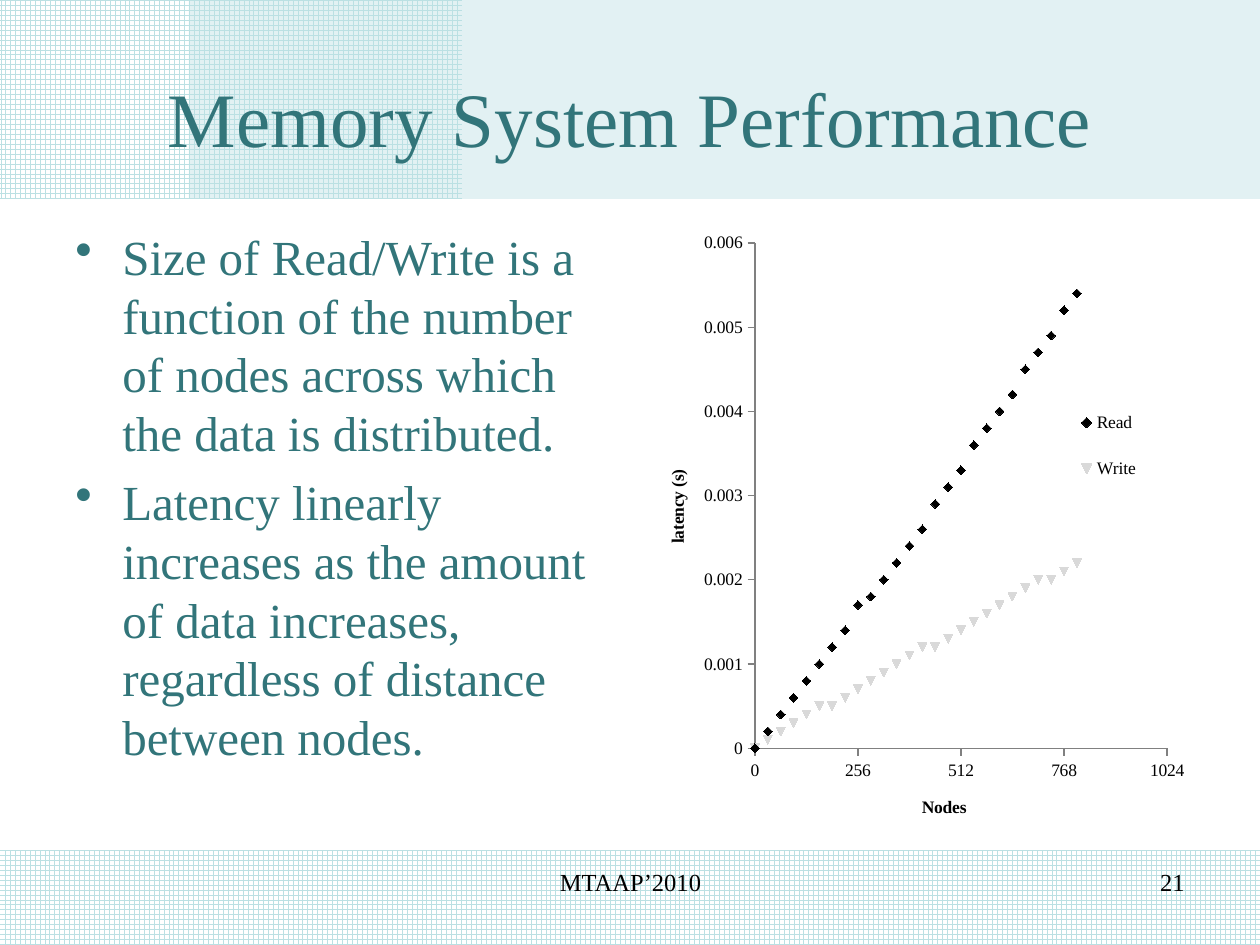
from lxml import etree
from pptx import Presentation, util as u
from pptx.chart.data import XyChartData
from pptx.dml.color import RGBColor
from pptx.enum import chart as ch, dml, shapes, text
from pptx.oxml import parse_xml
from pptx.oxml.ns import nsdecls, qn

SCALE = 914400 / 126
FONT = "Times New Roman"
TEAL, MINT, BLACK, GRAY = "32757A", "BBE0E3", "000000", "808080"
STEP = 32
READ = [0, 2, 4, 6, 8, 10, 12, 14, 17, 18, 20, 22, 24,
        26, 29, 31, 33, 36, 38, 40, 42, 45, 47, 49, 52, 54]
WRITE = [0, 1, 2, 3, 4, 5, 5, 6, 7, 8, 9, 10, 11,
         12, 12, 13, 14, 15, 16, 17, 18, 19, 20, 20, 21, 22]
POINTS = [
    "Size of Read/Write is a function of the number of nodes across which the data is distributed.",
    "Latency linearly increases as the amount of data increases, regardless of distance between nodes.",
]


def px(num):
    return u.Emu(round(num * SCALE))


def color(code):
    return RGBColor.from_string(code)


def style(font, size, code, bold=False):
    font.name, font.size, font.bold = FONT, u.Pt(size), bold
    font.color.rgb = color(code)


def add_band(slide, box):
    band = slide.shapes.add_shape(shapes.MSO_SHAPE.FLOWCHART_PROCESS, *map(px, box))
    band.shadow.inherit = False
    band.line.fill.background()
    return band.fill


def add_grid(slide, box):
    fill = add_band(slide, box)
    fill.patterned()
    fill.pattern = dml.MSO_PATTERN.LARGE_GRID
    fill.fore_color.rgb, fill.back_color.rgb = color(MINT), color("FFFFFF")


def add_tint(slide, box, alpha):
    fill = add_band(slide, box)
    fill.solid()
    fill.fore_color.rgb = color(MINT)
    tint = fill._xPr.find(".//" + qn("a:srgbClr"))
    etree.SubElement(tint, qn("a:alpha"), val=str(alpha * 1000))


def set_title(slide, box, words):
    title = slide.shapes.title
    title.left, title.top, title.width, title.height = map(px, box)
    frame = title.text_frame
    frame.text = words
    frame.vertical_anchor = text.MSO_ANCHOR.MIDDLE
    para = frame.paragraphs[0]
    para.alignment = text.PP_ALIGN.CENTER
    style(para.font, 44, TEAL)
    slide.shapes._spTree.append(title._element)


def add_text(slide, box, lines, size, code, align):
    frame = slide.shapes.add_textbox(*map(px, box)).text_frame
    frame.word_wrap = True
    frame.text = "\n".join(lines)
    for para in frame.paragraphs:
        para.alignment = align
        style(para.font, size, code)
    return frame


def add_list(slide, box, lines):
    frame = add_text(slide, box, lines, 28, TEAL, text.PP_ALIGN.LEFT)
    for num, para in enumerate(frame.paragraphs):
        para.space_before = u.Pt(5.6 if num else 0)
        props = para._p.get_or_add_pPr()
        props.set("marL", str(px(47)))
        props.set("indent", str(px(-47)))
        mark = parse_xml(f'<a:buChar {nsdecls("a")} char="•"/>')
        props.insert_element_before(mark, "a:tabLst", "a:defRPr", "a:extLst")


def place(part, box, inner=False):
    for old in part.findall(qn("c:layout")):
        part.remove(old)
    target = '<c:layoutTarget val="inner"/>' if inner else ""
    modes = "".join(f'<c:{key}Mode val="edge"/>' for key in "xy")
    sizes = "".join(f'<c:{key} val="{val}"/>' for key, val in zip("xywh", box))
    layout = parse_xml(f'<c:layout {nsdecls("c")}><c:manualLayout>{target}{modes}{sizes}'
                       "</c:manualLayout></c:layout>")
    part.insert(0 if inner else 1, layout)


def set_axis(axis, name, top, step, turn):
    axis.minimum_scale, axis.maximum_scale, axis.major_unit = 0, top, step
    axis.has_major_gridlines = False
    axis.major_tick_mark = ch.XL_TICK_MARK.OUTSIDE
    axis.tick_labels.number_format = "General"
    axis.tick_labels.number_format_is_linked = False
    style(axis.tick_labels.font, 10, BLACK)
    axis.format.line.color.rgb = color(GRAY)
    axis.format.line.width = u.Pt(0.75)
    frame = axis.axis_title.text_frame
    frame.text = name
    style(frame.paragraphs[0].runs[0].font, 10, BLACK, True)
    frame._txBody.bodyPr.set("rot", str(turn * 60000))


def add_plot(slide, box):
    data = XyChartData()
    for name, vals in (("Read", READ), ("Write", WRITE)):
        series = data.add_series(name)
        for num, val in enumerate(vals):
            series.add_data_point(num * STEP, val / 10000)
    chart = slide.shapes.add_chart(ch.XL_CHART_TYPE.XY_SCATTER, *map(px, box), data).chart
    style(chart.font, 10, BLACK)
    chart.has_title = False
    plot = chart.plots[0]
    plot.vary_by_categories = False
    for series, code in zip(plot.series, (BLACK, "D9D9D9")):
        series.smooth = False
        series.format.line.fill.background()
        mark = series.marker
        mark.style, mark.size = ch.XL_MARKER_STYLE.AUTOMATIC, 5
        mark.format.fill.solid()
        mark.format.fill.fore_color.rgb = color(code)
        mark.format.line.color.rgb = color(code)
    set_axis(chart.category_axis, "Nodes", 1024, 256, 0)
    set_axis(chart.value_axis, "latency (s)", 0.006, 0.001, -90)
    chart.has_legend = True
    legend = chart.legend
    legend.position = ch.XL_LEGEND_POSITION.RIGHT
    legend.include_in_layout = True
    style(legend.font, 10, BLACK)
    place(legend._element, (0.78, 0.27, 0.13, 0.19))
    place(chart._chartSpace.chart.plotArea, (0.21, 0.04, 0.74, 0.81), True)


def main():
    deck = Presentation()
    deck.slide_width, deck.slide_height = px(1260), px(945)
    slide = deck.slides.add_slide(deck.slide_layouts[5])
    add_grid(slide, (0, 850, 1260, 95))
    add_grid(slide, (0, 0, 462, 199))
    add_tint(slide, (189, 0, 1071, 199), 42)
    set_title(slide, (63, 38, 1134, 157), "Memory System Performance")
    add_list(slide, (63, 220, 557, 624), POINTS)
    add_text(slide, (431, 861, 399, 66), ["MTAAP’2010"], 14, BLACK, text.PP_ALIGN.CENTER)
    add_text(slide, (903, 861, 294, 66), ["21"], 14, BLACK, text.PP_ALIGN.RIGHT)
    add_plot(slide, (638, 218, 557, 624))
    deck.save("out.pptx")


if __name__ == "__main__":
    main()
